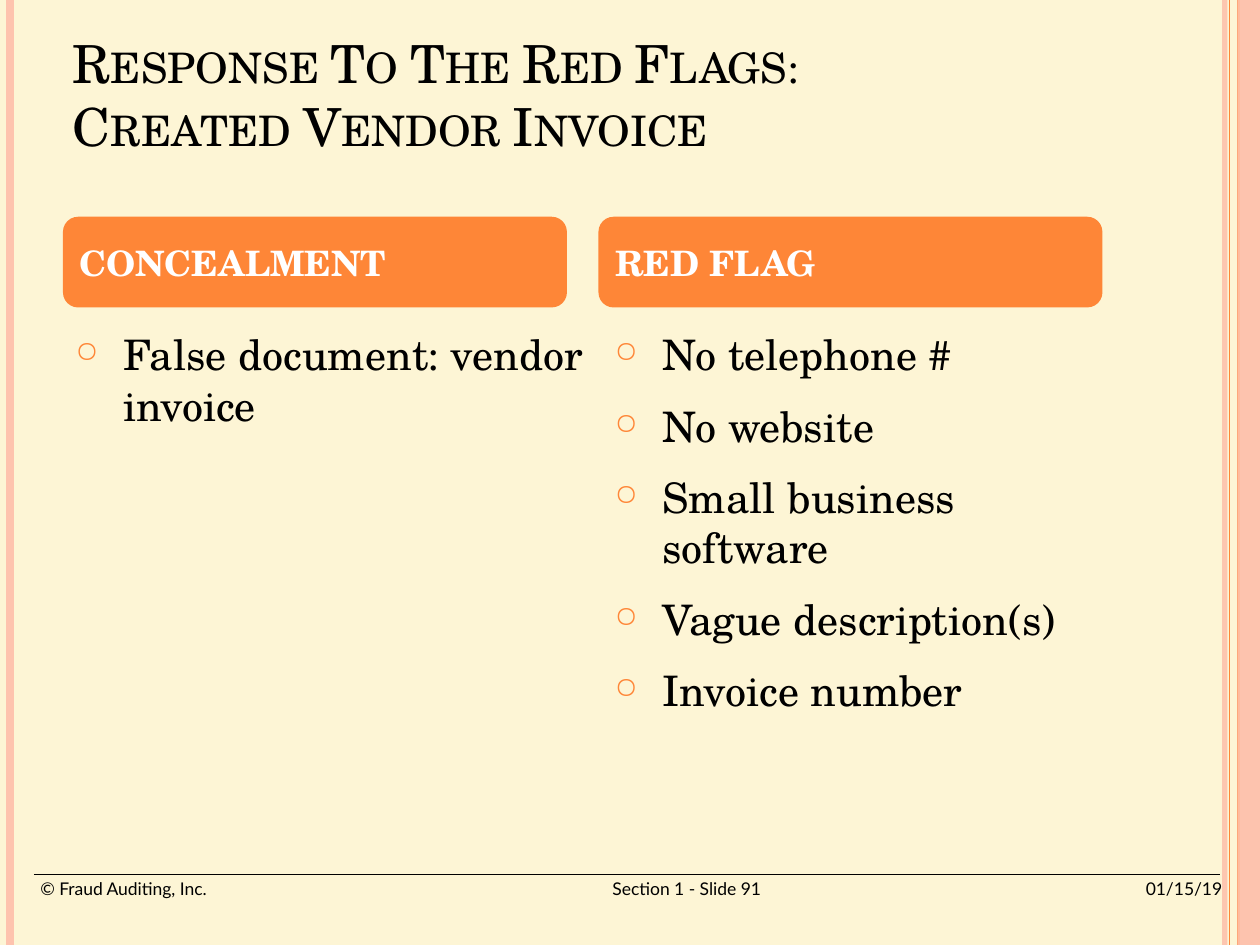
from lxml.etree import SubElement
from pptx import Presentation
from pptx.dml.color import RGBColor
from pptx.enum.shapes import MSO_CONNECTOR, MSO_SHAPE
from pptx.enum.text import MSO_ANCHOR
from pptx.oxml.ns import qn
from pptx.util import Inches, Pt

COLS, ROWS = 100, 75
UNIT = Inches(0.1)
INK = {"paper": "FDF5D5", "text": "000000", "pink": "FEC3AE",
       "orange": "FE8637", "bullet": "FF8637", "white": "FFFFFF"}
SERIF, SANS = "TeX Gyre Schola", "Lato"
FORMAT = {
    "title": {"name": SERIF, "size": Pt(30)},
    "head": {"name": SERIF, "size": Pt(20), "bold": True},
    "body": {"name": SERIF, "size": Pt(24)},
    "foot": {"name": SANS, "size": Pt(10)},
}
FRAME = {
    "plain": {"word_wrap": True},
    "middle": {"word_wrap": True, "vertical_anchor": MSO_ANCHOR.MIDDLE},
    "tight": {"word_wrap": True, "margin_left": Inches(0.02),
              "margin_right": Inches(0.02), "margin_top": 0,
              "margin_bottom": 0},
}


def grid(*cells):
    return [round(cell * UNIT) for cell in cells]


def apply(item, values):
    for key, value in values.items():
        setattr(item, key, value)


def tint(color, ink, alpha=100):
    color.rgb = RGBColor.from_string(INK[ink])
    if alpha < 100:
        for node in color._xFill.iter(qn("a:srgbClr")):
            SubElement(node, qn("a:alpha"), val=str(alpha * 1000))


def write(shape, lines, style, frame="plain", ink="text"):
    text = shape.text_frame
    apply(text, FRAME[frame])
    text.text = "\n".join(lines)
    for para in text.paragraphs:
        for run in para.runs:
            apply(run.font, FORMAT[style])
            tint(run.font.color, ink)
    return text


def rule(slide, start, end, ink, width, alpha=100):
    line = slide.shapes.add_connector(MSO_CONNECTOR.STRAIGHT, *grid(*start, *end))
    line.line.width = Pt(width)
    line.line.fill.solid()
    line.line.fill.fore_color.rgb = RGBColor.from_string(INK[ink])
    SubElement(line._element.spPr, qn("a:effectLst"))
    fade(line, alpha)


def fade(shape, alpha):
    if alpha < 100:
        for node in shape._element.spPr.iter(qn("a:srgbClr")):
            SubElement(node, qn("a:alpha"), val=str(alpha * 1000))


def block(slide, kind, box, ink, alpha=100):
    shape = slide.shapes.add_shape(kind, *grid(*box))
    shape.shadow.inherit = False
    shape.fill.solid()
    shape.fill.fore_color.rgb = RGBColor.from_string(INK[ink])
    shape.line.fill.background()
    fade(shape, alpha)
    return shape


def border(slide, box):
    left, top, wide, high = box
    right, base = left + wide, top + high
    band = (right - 1.8, top, 1.8, high)
    block(slide, MSO_SHAPE.RECTANGLE, band, "pink", 87)
    for x, ink, width, alpha in ((right - 2.8, "pink", 3, 93),
                                 (right - 1.7, "orange", 1.5, 100)):
        rule(slide, (x, top), (x, base), ink, width, alpha)
    block(slide, MSO_SHAPE.RECTANGLE, band, "pink", 87)
    rule(slide, (right - 2.4, top), (right - 2.4, base), "orange", 0.75)
    rule(slide, (left + 0.8, top), (left + 0.8, base), "pink", 4.5)


def footer(slide, box, words):
    left, top, wide, high = box
    area = slide.shapes.add_textbox(*grid(*box))
    text = write(area, ["\t".join(words)], "foot", "tight")
    tabs = SubElement(text.paragraphs[0]._p.get_or_add_pPr(), qn("a:tabLst"))
    for stop, side in ((51.3, "ctr"), (93.8, "r")):
        SubElement(tabs, qn("a:tab"), pos=str(grid(stop)[0]), algn=side)
    rule(slide, (left - 0.3, top - 0.3), (left + wide - 0.7, top - 0.3), "text", 1)


def title(slide, box, words):
    area = slide.shapes.add_textbox(*grid(*box))
    text = write(area, [words], "title", "middle")
    for run in text.paragraphs[0].runs:
        run._r.get_or_add_rPr().set("cap", "small")


def bullet(para):
    props = para._p.get_or_add_pPr()
    props.set("marL", str(Inches(0.38)))
    props.set("indent", str(-Inches(0.38)))
    SubElement(SubElement(props, qn("a:buClr")), qn("a:srgbClr"), val=INK["bullet"])
    SubElement(props, qn("a:buSzPct"), val="70000")
    SubElement(props, qn("a:buChar"), char="○")


def column(slide, box, head, items, inset, span):
    left, top, wide, high = box
    label = block(slide, MSO_SHAPE.ROUNDED_RECTANGLE, (left, top, wide, 7.2), "orange")
    label.adjustments[0] = 0.167
    text = write(label, [head], "head", "middle", "white")
    text.paragraphs[0].alignment = 1
    area = slide.shapes.add_textbox(*grid(left + inset, top + 8.4, span, high - 8.4))
    for order, para in enumerate(write(area, items, "body").paragraphs):
        bullet(para)
        para.space_after = Pt(4.8)
        if order:
            para.space_before = Pt(7.2)


def main():
    deck = Presentation()
    deck.slide_width, deck.slide_height = grid(COLS, ROWS)
    slide = deck.slides.add_slide(deck.slide_layouts[6])
    slide.background.fill.solid()
    tint(slide.background.fill.fore_color, "paper")
    footer(slide, (3, 69.7, 94.5, 3.4),
           ("© Fraud Auditing, Inc. ", "Section 1 - Slide 91", "01/15/19"))
    border(slide, (0, 0, COLS, ROWS))
    title(slide, (4.8, 1.2, 90.1, 12.5),
          "Response To The Red Flags:\vCreated Vendor Invoice")
    parts = (
        ("CONCEALMENT", ["False document: vendor invoice"], 0, 44.1),
        ("RED FLAG", ["No telephone #", "No website", "Small business software",
                      "Vague description(s)", "Invoice number"], 0.3, 40),
    )
    for place, part in enumerate(parts):
        column(slide, (5 + 42.5 * place, 17.2, 40, 49.5), *part)
    deck.save("out.pptx")


if __name__ == "__main__":
    main()
